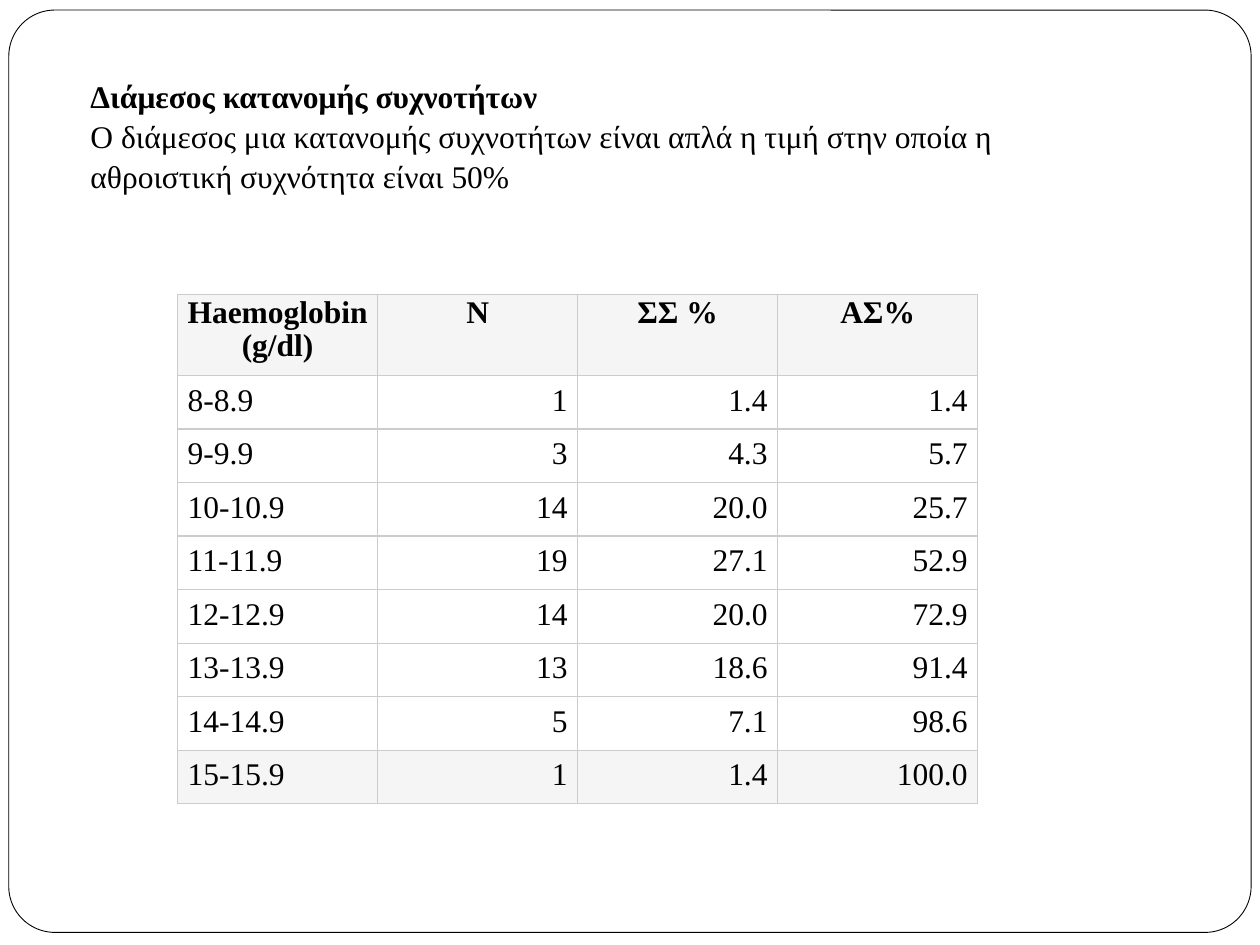
from lxml import etree
from pptx import Presentation
from pptx.dml.color import RGBColor
from pptx.enum.shapes import MSO_SHAPE
from pptx.enum.text import MSO_AUTO_SIZE, PP_ALIGN
from pptx.oxml.ns import qn
from pptx.util import Inches, Pt

ROUNDED = MSO_SHAPE.ROUNDED_RECTANGLE
GROW = MSO_AUTO_SIZE.SHAPE_TO_FIT_TEXT
LEFT, CENTER, RIGHT = PP_ALIGN.LEFT, PP_ALIGN.CENTER, PP_ALIGN.RIGHT

BLACK = RGBColor(0x00, 0x00, 0x00)
WHITE = RGBColor(0xFF, 0xFF, 0xFF)
PALE_GREY = RGBColor(0xF5, 0xF5, 0xF5)
BORDER_GREY = RGBColor(0xCC, 0xCC, 0xCC)

FONT_FORMAT = {"name": "Times New Roman", "size": Pt(18)}

HEADING = "Διάμεσος κατανομής συχνοτήτων"
DEFINITION = ("Ο διάμεσος μια κατανομής συχνοτήτων είναι απλά η τιμή στην οποία η "
              "αθροιστική συχνότητα είναι 50%")
FREQUENCIES = [
    ("Haemoglobin (g/dl)", "Ν", "ΣΣ %", "ΑΣ%"),
    ("8-8.9", "1", "1.4", "1.4"),
    ("9-9.9", "3", "4.3", "5.7"),
    ("10-10.9", "14", "20.0", "25.7"),
    ("11-11.9", "19", "27.1", "52.9"),
    ("12-12.9", "14", "20.0", "72.9"),
    ("13-13.9", "13", "18.6", "91.4"),
    ("14-14.9", "5", "7.1", "98.6"),
    ("15-15.9", "1", "1.4", "100.0"),
]


def write(paragraph, text, bold=False, align=LEFT):
    paragraph.alignment = align
    run = paragraph.add_run()
    run.text = text
    for attribute, value in FONT_FORMAT.items():
        setattr(run.font, attribute, value)
    run.font.bold = bold
    run.font.color.rgb = BLACK


def add_frame(slide, box):
    frame = slide.shapes.add_shape(ROUNDED, *box)
    frame.adjustments[0] = 0.05
    frame.shadow.inherit = False
    frame.fill.solid()
    frame.fill.fore_color.rgb = WHITE
    frame.line.color.rgb = BLACK
    frame.line.width = Pt(0.5)


def add_definition(slide, box):
    text_frame = slide.shapes.add_textbox(*box).text_frame
    text_frame.word_wrap = True
    text_frame.auto_size = GROW
    write(text_frame.paragraphs[0], HEADING, bold=True)
    write(text_frame.add_paragraph(), DEFINITION)
    for paragraph in text_frame.paragraphs:
        paragraph.line_spacing = 1.05


def add_borders(cell):
    properties = cell._tc.get_or_add_tcPr()
    for side in ("a:lnL", "a:lnR", "a:lnT", "a:lnB"):
        border = etree.SubElement(properties, qn(side), w=str(Pt(0.75)))
        fill = etree.SubElement(border, qn("a:solidFill"))
        etree.SubElement(fill, qn("a:srgbClr"), val=str(BORDER_GREY))


def format_cell(cell, margin_x, margin_y, fill):
    margins = {"margin_left": margin_x, "margin_right": margin_x,
               "margin_top": margin_y, "margin_bottom": margin_y}
    for attribute, value in margins.items():
        setattr(cell, attribute, value)
    add_borders(cell)
    cell.fill.solid()
    cell.fill.fore_color.rgb = fill


def add_frequency_table(slide, box):
    height = box[3]
    last_row = len(FREQUENCIES) - 1
    table = slide.shapes.add_table(len(FREQUENCIES), len(FREQUENCIES[0]), *box).table
    header_height = Inches(0.64)
    for r, values in enumerate(FREQUENCIES):
        is_header = r == 0
        table.rows[r].height = header_height if is_header else (height - header_height) // last_row
        margin_x, margin_y = (Inches(0.02),) * 2 if is_header else (Inches(0.08), Inches(0.06))
        fill = PALE_GREY if r in (0, last_row) else WHITE
        for c, value in enumerate(values):
            cell = table.cell(r, c)
            format_cell(cell, margin_x, margin_y, fill)
            align = CENTER if is_header else RIGHT if c else LEFT
            paragraph = cell.text_frame.paragraphs[0]
            write(paragraph, value, bold=is_header, align=align)
            if is_header:
                paragraph.line_spacing = 0.95


def main():
    presentation = Presentation()
    presentation.slide_width, presentation.slide_height = Inches(10), Inches(7.5)
    slide = presentation.slides.add_slide(presentation.slide_layouts[6])
    add_frame(slide, (Inches(0.07), Inches(0.08), Inches(9.86), Inches(7.32)))
    add_definition(slide, (Inches(0.62), Inches(0.55), Inches(8.36), Inches(1.01)))
    add_frequency_table(slide, (Inches(1.41), Inches(2.34), Inches(6.35), Inches(4.04)))
    presentation.save("out.pptx")


if __name__ == "__main__":
    main()
